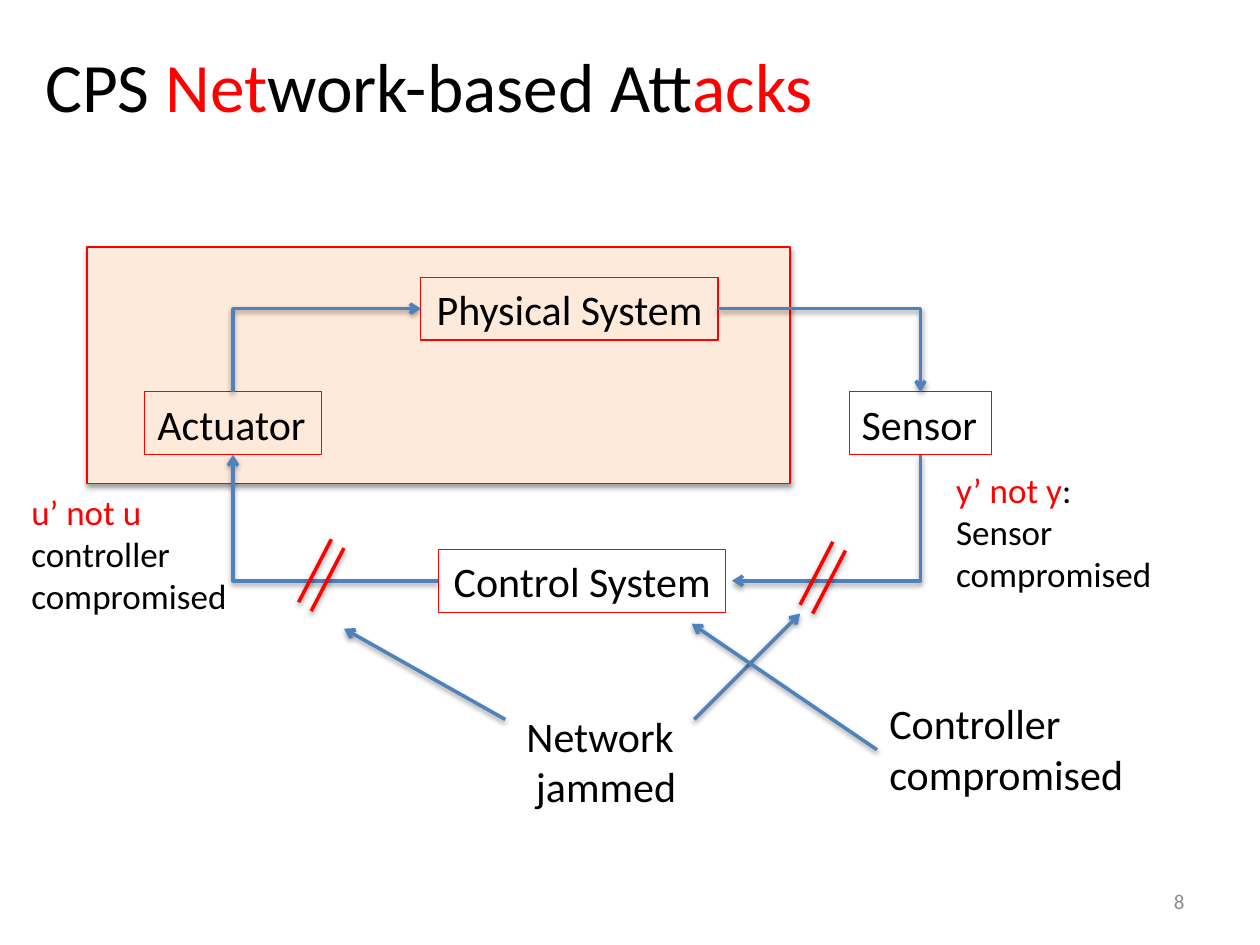
"""Build a slide showing network-based attacks on a cyber-physical control loop."""
from lxml import etree
from pptx import Presentation
from pptx.dml.color import RGBColor
from pptx.enum.shapes import MSO_CONNECTOR, MSO_SHAPE
from pptx.enum.text import MSO_ANCHOR, PP_ALIGN
from pptx.oxml import parse_xml
from pptx.oxml.ns import qn
from pptx.util import Inches, Pt

STRAIGHT, ELBOW = MSO_CONNECTOR.STRAIGHT, MSO_CONNECTOR.ELBOW
RECTANGLE = MSO_SHAPE.RECTANGLE
MIDDLE, TOP = MSO_ANCHOR.MIDDLE, MSO_ANCHOR.TOP
LEFT, CENTER, RIGHT = PP_ALIGN.LEFT, PP_ALIGN.CENTER, PP_ALIGN.RIGHT
BLACK, RED, BLUE, GRAY, PEACH = "000000", "FF0000", "4F81BD", "8C8C8C", "FDEADA"
SHADOW = (
    '<a:effectLst xmlns:a="http://schemas.openxmlformats.org/drawingml/2006/main">'
    '<a:outerShdw blurRad="40000" dist="20000" dir="5400000" rotWithShape="0">'
    '<a:srgbClr val="000000"><a:alpha val="38000"/></a:srgbClr>'
    "</a:outerShdw></a:effectLst>"
)

prs = Presentation()
prs.slide_width, prs.slide_height = Inches(10), Inches(7.5)
slide = prs.slides.add_slide(prs.slide_layouts[6])


def add_text(box, lines, size, align=LEFT, anchor=TOP, wrap=False):
    """Add a text box whose lines are lists of (text, colour) pieces."""
    label = slide.shapes.add_textbox(*map(Inches, box))
    frame = label.text_frame
    frame.word_wrap = wrap
    frame.vertical_anchor = anchor
    for number, pieces in enumerate(lines):
        paragraph = frame.add_paragraph() if number else frame.paragraphs[0]
        paragraph.alignment = align
        for text, color in pieces:
            run = paragraph.add_run()
            run.text = text
            run.font.name = "Calibri"
            run.font.size = Pt(size)
            run.font.color.rgb = RGBColor.from_string(color)
    return label


def add_line(kind, start, end, color, arrow=None):
    """Add a shadowed line with an optional arrow at headEnd or tailEnd."""
    line = slide.shapes.add_connector(kind, *map(Inches, start + end))
    line.line.color.rgb = RGBColor.from_string(color)
    line.line.width = Pt(2)
    if arrow:
        etree.SubElement(line.line._get_or_add_ln(), qn(f"a:{arrow}"), type="arrow")
    line._element.spPr.append(parse_xml(SHADOW))
    return line


plant = slide.shapes.add_shape(
    RECTANGLE, Inches(0.69), Inches(1.96), Inches(5.58), Inches(1.88)
)
plant.fill.solid()
plant.fill.fore_color.rgb = RGBColor.from_string(PEACH)
plant.line.color.rgb = RGBColor.from_string(RED)
plant.line.width = Pt(0.75)
plant._element.spPr.append(parse_xml(SHADOW))

title = [("CPS", BLACK), (" Net", RED), ("work-based Att", BLACK), ("acks", RED)]
add_text((0.26, 0.17, 6.61, 1.01), [title], 39.6, anchor=MIDDLE, wrap=True)
add_text((7.17, 6.95, 2.33, 0.4), [[("8", GRAY)]], 12, RIGHT, MIDDLE, True)

components = {}
for name, left, top, width, align in [
    ("Physical System", 3.34, 2.2, 2.36, CENTER),
    ("Sensor", 6.74, 3.11, 1.13, LEFT),
    ("Control System", 3.48, 4.36, 2.28, CENTER),
    ("Actuator", 1.15, 3.11, 1.4, LEFT),
]:
    component = add_text((left, top, width, 0.5), [[(name, BLACK)]], 24, align)
    component.line.color.rgb = RGBColor.from_string(RED)
    component.line.width = Pt(0.75)
    components[name] = component

for source, source_site, start, target, target_site, end, arrow in [
    (None, 3, (5.81, 4.61), "Sensor", 2, (7.3, 3.61), "headEnd"),
    ("Physical System", 3, (5.7, 2.45), "Sensor", 0, (7.3, 3.11), "tailEnd"),
    ("Control System", 1, (3.48, 4.61), "Actuator", 2, (1.85, 3.61), "tailEnd"),
    ("Physical System", 1, (3.34, 2.45), "Actuator", 0, (1.85, 3.11), "headEnd"),
]:
    signal = add_line(ELBOW, start, end, BLUE, arrow)
    signal._element.spPr.find(qn("a:prstGeom")).set("prst", "bentConnector2")
    if source:
        signal.begin_connect(components[source], source_site)
    signal.end_connect(components[target], target_site)

for box, lines, size in [
    ((7.49, 3.67, 1.77, 1.11),
     [[("y’ not y", RED), (":", BLACK)], [("Sensor", BLACK)], [("compromised", BLACK)]], 20),
    ((0.15, 3.84, 1.77, 1.11),
     [[("u’ not u", RED)], [("controller", BLACK)], [("compromised", BLACK)]], 20),
    ((4.08, 5.59, 1.4, 0.91), [[("Network", BLACK)], [(" jammed", BLACK)]], 24),
    ((6.96, 5.49, 2.08, 0.91), [[("Controller", BLACK)], [("compromised", BLACK)]], 24),
]:
    add_text(box, lines, size)

for left, top in [(6.35, 4.3), (2.37, 4.28)]:
    for shift_x, shift_y in [(0, 0), (0.1, 0.07)]:
        x, y = left + shift_x, top + shift_y
        add_line(STRAIGHT, (x + 0.26, y), (x, y + 0.5), RED)

for start, end in [
    ((4.01, 5.71), (2.73, 4.99)),
    ((5.51, 5.71), (6.35, 4.87)),
    ((6.96, 5.95), (5.49, 4.95)),
]:
    add_line(STRAIGHT, start, end, BLUE, "tailEnd")

prs.save("out.pptx")
